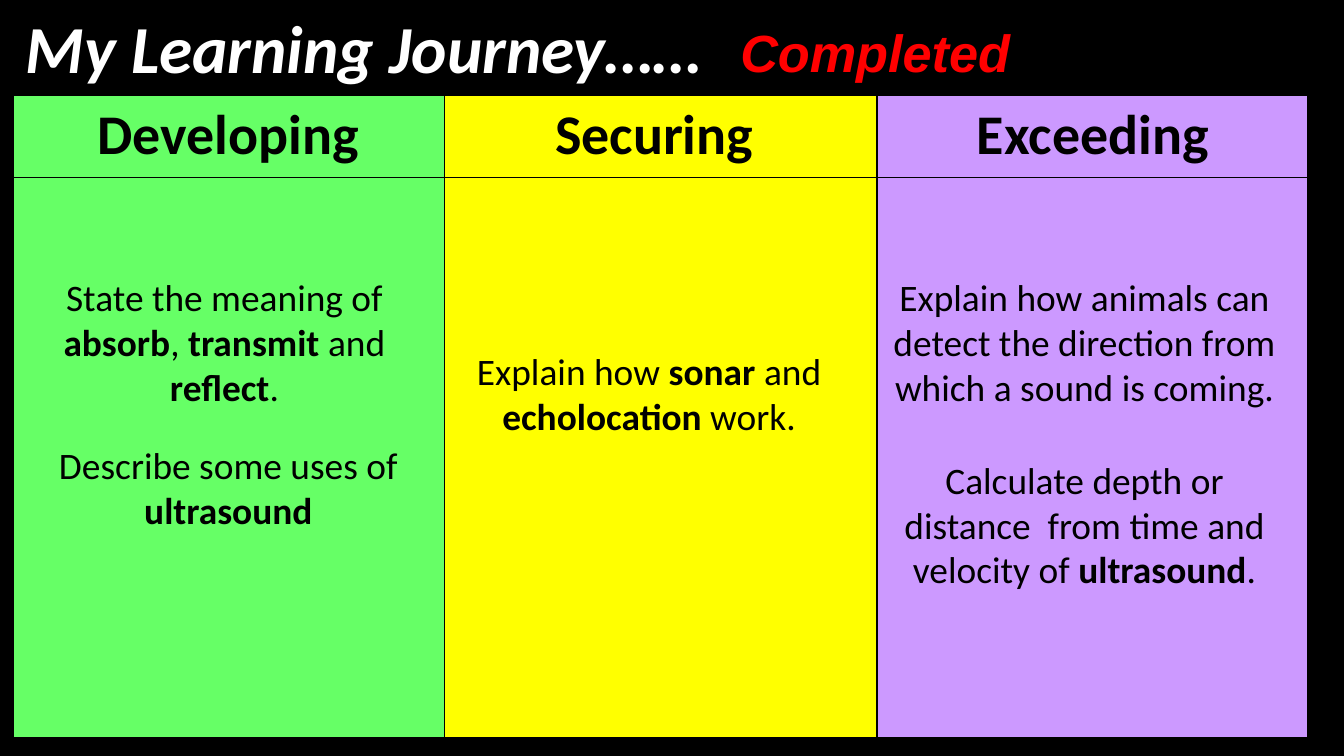
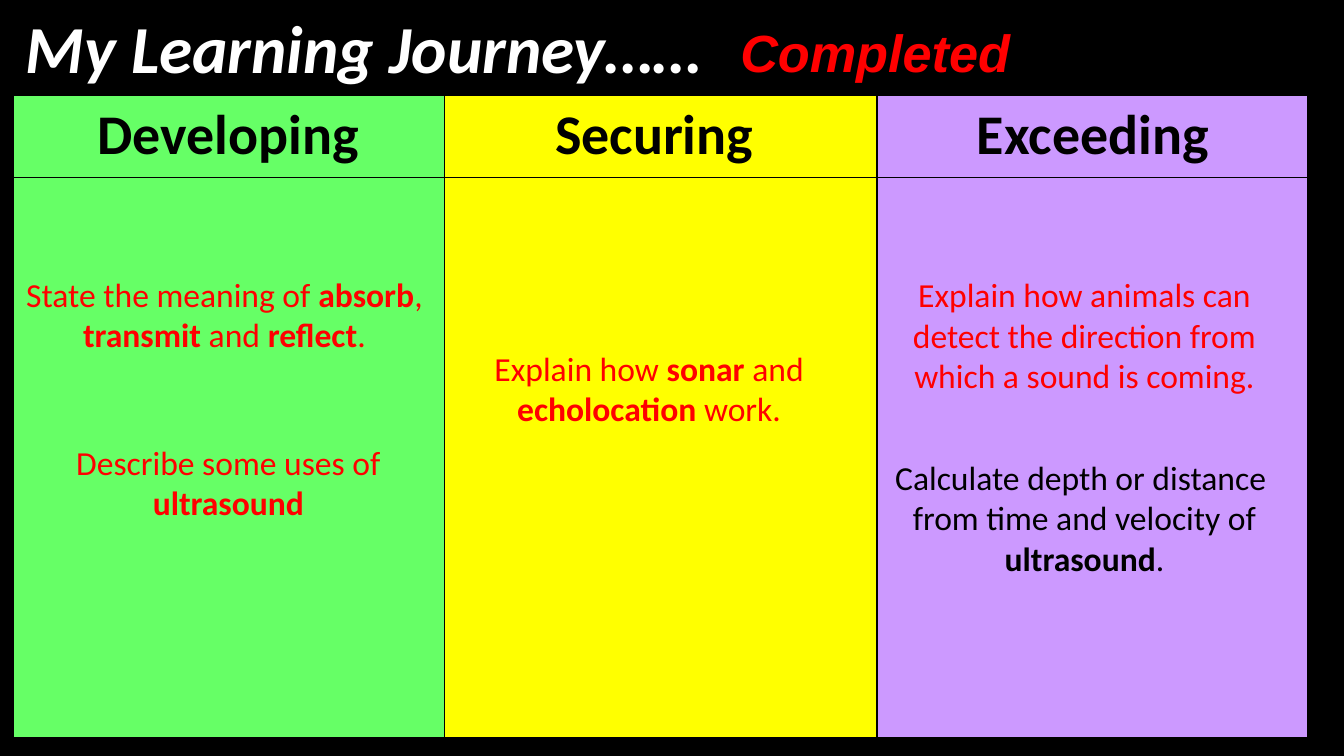
from pptx import Presentation
from pptx import util as u
from pptx.dml.color import RGBColor
from pptx.enum import text
from pptx.oxml import parse_xml
from pptx.oxml.ns import nsdecls

COLOURS = {
    "black": "000000",
    "white": "FFFFFF",
    "red": "FF0000",
    "green": "66FF66",
    "yellow": "FFFF00",
    "purple": "CC99FF",
}
LEVELS = [("Developing", "green"), ("Securing ", "yellow"), ("Exceeding", "purple")]

# Table geometry in inches, border widths in points
TABLE_LEFT, TABLE_TOP, TABLE_WIDTH = 0.09, 0.7, 9.65
ROW_HEIGHTS = [0.62, 4.18]
OUTER_BORDER, INNER_BORDER = 2.25, 1
GOAL_WIDTH = 3.16

# Goals: left, top, height on each slide, wording with **bold** terms
GOALS = [
    (0.09, 1.99, (1.38, 0.93),
     "State the meaning of **absorb**, **transmit** and **reflect**."),
    (3.25, 2.54, (0.77, 0.71), "Explain how **sonar** and **echolocation** work."),
    (6.49, 1.99, (1.11, 1.01),
     "Explain how animals can detect the direction from which a sound is coming."),
    (0.12, 3.24, (1.04, 0.93), "Describe some uses of **ultrasound**"),
    (6.49, 3.35, (1.11, 1.01),
     "Calculate depth or distance  from time and velocity of **ultrasound**."),
]


def rgb(colour):
    return RGBColor.from_string(COLOURS[colour])


def write_text(frame, wording, size, colour="black", font="Calibri",
               bold=False, italic=False, centred=True):
    """Fill a text frame; parts between ** marks are bold."""
    frame.word_wrap = True
    paragraph = frame.paragraphs[0]
    if centred:
        paragraph.alignment = text.PP_ALIGN.CENTER
        paragraph._p.get_or_add_pPr().append(parse_xml(
            f'<a:spcBef {nsdecls("a")}><a:spcPct val="20000"/></a:spcBef>'))
    else:
        paragraph.alignment = text.PP_ALIGN.LEFT
    for index, part in enumerate(wording.split("**")):
        if part:
            run = paragraph.add_run()
            run.text = part
            run.font.name = font
            run.font.size = u.Pt(size)
            run.font.bold = bold or index % 2 == 1
            run.font.italic = italic
            run.font.color.rgb = rgb(colour)


def add_text_box(slide, left, top, width, height, wording, **text_format):
    box = slide.shapes.add_textbox(*map(u.Inches, (left, top, width, height)))
    write_text(box.text_frame, wording, **text_format)
    box.text_frame.auto_size = text.MSO_AUTO_SIZE.SHAPE_TO_FIT_TEXT


def set_title(slide, wording):
    title = slide.shapes.title
    title.left, title.top = u.Inches(0.09), u.Inches(0)
    title.width, title.height = u.Inches(7.18), u.Inches(1.41)
    frame = title.text_frame
    frame.vertical_anchor = text.MSO_ANCHOR.TOP
    frame.auto_size = text.MSO_AUTO_SIZE.SHAPE_TO_FIT_TEXT
    write_text(frame, wording, size=36, colour="white", bold=True, italic=True,
               centred=False)
    properties = frame.paragraphs[0]._p.get_or_add_pPr()
    properties.set("marL", str(u.Inches(0.15)))
    properties.set("indent", str(u.Inches(-0.15)))


def set_borders(cell, widths):
    """Draw black borders in the order left, right, top, bottom."""
    properties = cell._tc.get_or_add_tcPr()
    for side, width in zip("LRTB", widths):
        properties.append(parse_xml(
            f'<a:ln{side} {nsdecls("a")} w="{u.Pt(width)}"><a:solidFill>'
            f'<a:srgbClr val="{COLOURS["black"]}"/></a:solidFill></a:ln{side}>'))


def add_level_table(slide):
    rows, columns = len(ROW_HEIGHTS), len(LEVELS)
    table = slide.shapes.add_table(
        rows, columns, u.Inches(TABLE_LEFT), u.Inches(TABLE_TOP),
        u.Inches(TABLE_WIDTH), u.Inches(sum(ROW_HEIGHTS))).table
    table.horz_banding = False
    for row, height in enumerate(ROW_HEIGHTS):
        table.rows[row].height = u.Inches(height)
    for column, (level, colour) in enumerate(LEVELS):
        table.columns[column].width = u.Inches(TABLE_WIDTH / columns)
        for row in range(rows):
            cell = table.cell(row, column)
            on_edge = (column == 0, column == columns - 1, row == 0, row == rows - 1)
            set_borders(cell, [OUTER_BORDER if edge else INNER_BORDER
                               for edge in on_edge])
            cell.fill.solid()
            cell.fill.fore_color.rgb = rgb(colour)
        header = table.cell(0, column)
        header.vertical_anchor = text.MSO_ANCHOR.MIDDLE
        header.margin_left = header.margin_right = u.Inches(0.07)
        header.margin_top = header.margin_bottom = u.Inches(0.04)
        write_text(header.text_frame, level, size=30, bold=True)


def add_journey_slide(presentation, version, size, goal_colours):
    slide = presentation.slides.add_slide(presentation.slide_layouts[5])
    set_title(slide, "My Learning Journey……")
    add_level_table(slide)
    for (left, top, heights, wording), colour in zip(GOALS, goal_colours):
        add_text_box(slide, left, top, GOAL_WIDTH, heights[version], wording,
                     size=size, colour=colour)
    add_text_box(slide, 5.41, 0.1, 2.73, 0.57, "Completed", size=28, colour="red",
                 font="Arial", bold=True, italic=True, centred=False)


def main():
    # Widescreen 16:9 page on black
    presentation = Presentation()
    presentation.slide_width = u.Inches(10)
    presentation.slide_height = u.Inches(10 * 9 / 16)
    background = presentation.slide_master.background.fill
    background.solid()
    background.fore_color.rgb = rgb("black")

    # Goals to reach, then the same goals with the completed ones in red
    add_journey_slide(presentation, 0, 20, ["black"] * 5)
    add_journey_slide(presentation, 1, 18, ["red"] * 4 + ["black"])
    presentation.save("out.pptx")


if __name__ == "__main__":
    main()
